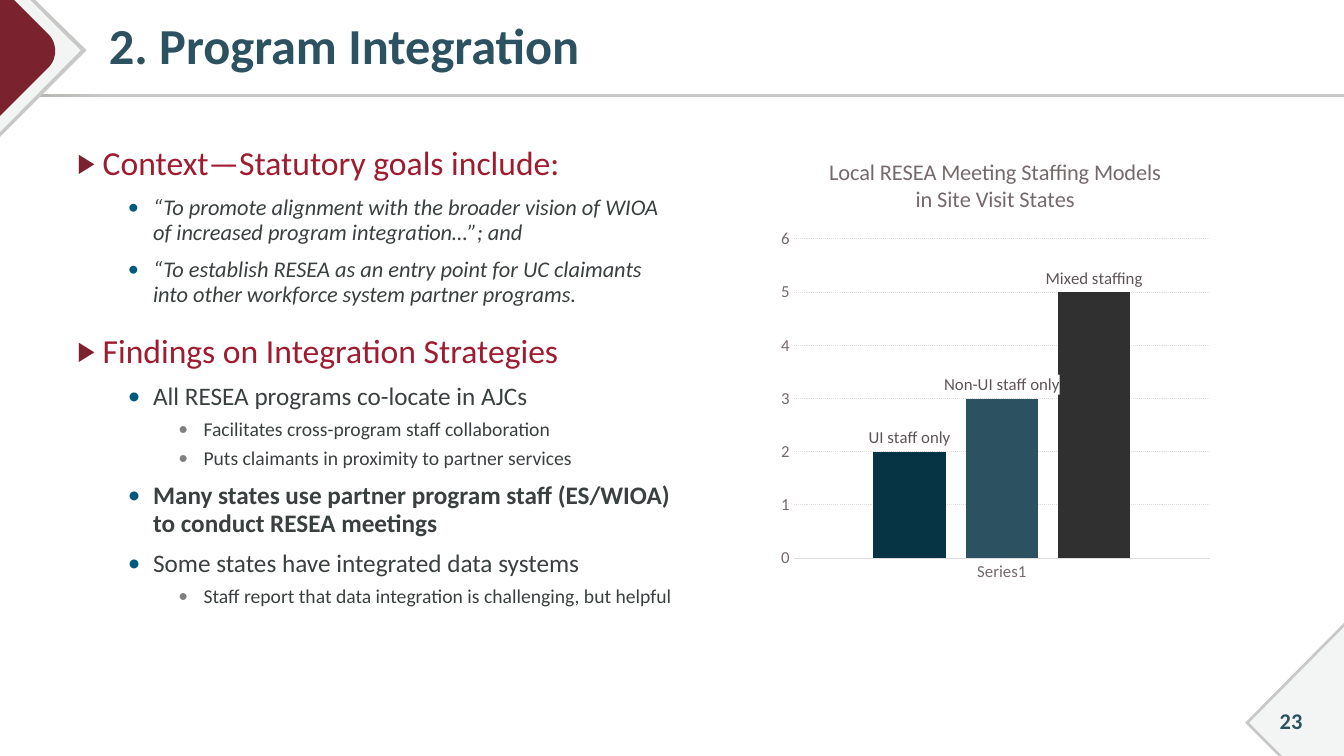
from lxml import etree
from pptx import Presentation
from pptx.chart.data import CategoryChartData
from pptx.dml.color import RGBColor
from pptx.enum.chart import XL_CHART_TYPE, XL_LABEL_POSITION, XL_TICK_MARK
from pptx.enum.dml import MSO_LINE
from pptx.enum.shapes import MSO_SHAPE
from pptx.enum.text import MSO_ANCHOR, PP_ALIGN
from pptx.oxml import parse_xml
from pptx.oxml.ns import nsdecls, qn
from pptx.util import Inches, Pt

FONT = "Calibri"
HEX = {
    "slate": "2C5261", "red": "9E1C30", "wine": "7A232F", "ink": "3A4040",
    "blue": "005A7C", "gray": "808080", "edge": "C8C8C6", "dusk": "ABABA8",
    "pale": "F3F4F4", "navy": "073445", "coal": "303030", "mauve": "76696C",
    "label": "5E5457", "grid": "E0DCDD", "dark": "242021",
}
# Per level: indent, space before, size, text colour, bullet, its colour and percent
LEVELS = [
    (0.25, 18, 24, "red", "▶", "wine", 80),
    (0.75, 8, 18, "ink", "•", "blue", 100),
    (1.25, 5, 14, "ink", "•", "gray", 100),
]
QUOTE = {"size": 16, "italic": True}
POINTS = [
    (0, "Context—Statutory goals include:", {}),
    (1, "“To promote alignment with the broader vision of WIOA of increased "
        "program integration…”; and", QUOTE),
    (1, "“To establish RESEA as an entry point for UC claimants into other "
        "workforce system partner programs.", QUOTE),
    (0, "Findings on Integration Strategies", {}),
    (1, "All RESEA programs co-locate in AJCs", {}),
    (2, "Facilitates cross-program staff collaboration", {}),
    (2, "Puts claimants in proximity to partner services", {}),
    (1, "Many states use partner program staff (ES/WIOA) to conduct RESEA "
        "meetings", {"bold": True}),
    (1, "Some states have integrated data systems", {}),
    (2, "Staff report that data integration is challenging, but helpful", {}),
]
BARS = [
    ("UI staff only", 2, "navy"),
    ("Non-UI staff only", 3, "slate"),
    ("Mixed staffing", 5, "coal"),
]


def color(name):
    return RGBColor.from_string(HEX[name])


def style(font, size, tint, bold=False, italic=False):
    font.name, font.size = FONT, Pt(size)
    font.bold, font.italic = bold, italic
    font.color.rgb = color(tint)


def write(para, text, size, tint, bold=False, italic=False, align=None, line=None):
    """Fill a paragraph with one formatted run."""
    para.alignment = align
    if line:
        para.line_spacing = line
    run = para.add_run()
    run.text = text
    style(run.font, size, tint, bold, italic)


def frame(slide, box, anchor=MSO_ANCHOR.TOP, left=0.1):
    """Add a wrapping text box and return its text frame."""
    text = slide.shapes.add_textbox(*map(Inches, box)).text_frame
    text.word_wrap = True
    text.vertical_anchor = anchor
    text.margin_left = Inches(left)
    return text


def bullet(para, char, tint, percent, indent):
    props = para._p.get_or_add_pPr()
    props.set("marL", str(Inches(indent)))
    props.set("indent", str(Inches(-0.25)))
    shade = etree.SubElement(props, qn("a:buClr"))
    etree.SubElement(shade, qn("a:srgbClr"), val=HEX[tint])
    etree.SubElement(props, qn("a:buSzPct"), val=str(percent * 1000))
    etree.SubElement(props, qn("a:buFont"), typeface=FONT)
    etree.SubElement(props, qn("a:buChar"), char=char)


def outline(slide, points, tint):
    """Draw a closed, filled polygon from points in inches."""
    start, *rest = [(Inches(x), Inches(y)) for x, y in points]
    build = slide.shapes.build_freeform(*start, scale=1.0)
    build.add_line_segments(rest, close=True)
    shape = build.convert_to_shape()
    shape.shadow.inherit = False
    shape.fill.solid()
    shape.fill.fore_color.rgb = color(tint)
    shape.line.fill.background()


def curve(ends, steps=12):
    """Sample a cubic curve given by its four control points."""
    marks = [i / steps for i in range(steps + 1)]
    return [
        tuple((1 - t) ** 3 * a + 3 * t * (1 - t) ** 2 * b
              + 3 * t * t * (1 - t) * c + t ** 3 * d for a, b, c, d in zip(*ends))
        for t in marks
    ]


def rule(slide):
    bar = slide.shapes.add_shape(
        MSO_SHAPE.RECTANGLE, 0, Inches(0.93), Inches(13.33), Inches(0.03))
    bar.shadow.inherit = False
    bar.line.fill.background()
    bar.fill.gradient()
    bar.fill.gradient_angle = 0
    for stop, place, tint in zip(bar.fill.gradient_stops, (0, 0.08), ("dusk", "edge")):
        stop.position = place
        stop.color.rgb = color(tint)


def corners(slide):
    outline(slide, [(0, 0), (0.35, 0), (0.86, 0.5), (0, 1.36)], "edge")
    outline(slide, [(0, 0), (0.3, 0), (0.8, 0.5), (0, 1.31)], "pale")
    nose = curve([(0.48, 0.34), (0.57, 0.43), (0.57, 0.58), (0.48, 0.67)])
    outline(slide, [(0, 0), (0.14, 0), *nose, (0, 1.15)], "wine")
    for gap, tint in ((0, "edge"), (0.04, "pale")):
        outline(slide, [(13.33, 6.18 + gap), (13.33, 7.5), (12.68 + gap, 7.5),
                        (12.35 + gap, 7.17)], tint)


def body(slide):
    text = frame(slide, (0.67, 1.39, 6.15, 5.09))
    for i, (level, words, extra) in enumerate(POINTS):
        indent, before, size, tint, *mark = LEVELS[level]
        para = text.add_paragraph() if i else text.paragraphs[0]
        para.level = level
        bullet(para, *mark, indent)
        para.space_before = Pt(before if i else 0)
        write(para, words, **{"size": size, "tint": tint, "line": 0.95, **extra})


def axes(chart):
    value, group = chart.value_axis, chart.category_axis
    for axis in (value, group):
        axis.major_tick_mark = axis.minor_tick_mark = XL_TICK_MARK.NONE
        style(axis.tick_labels.font, 12, "mauve")
    value.minimum_scale, value.maximum_scale, value.major_unit = 0, 6, 1
    value.format.line.fill.background()
    for line in (value.major_gridlines.format.line, group.format.line):
        line.color.rgb = color("grid")
        line.width = Pt(0.75)
    value.major_gridlines.format.line.dash_style = MSO_LINE.ROUND_DOT


def layout(chart, x, y, w, h):
    """Fix the inner plot area, as fractions of the chart."""
    area = chart._chartSpace.chart.plotArea
    for old in area.findall(qn("c:layout")):
        area.remove(old)
    spots = "".join(f'<c:{k} val="{v}"/>' for k, v in (
        ("layoutTarget", "inner"), ("xMode", "edge"), ("yMode", "edge"),
        ("x", x), ("y", y), ("w", w), ("h", h)))
    area.insert(0, parse_xml(
        f'<c:layout {nsdecls("c")}><c:manualLayout>{spots}</c:manualLayout></c:layout>'))


def graph(slide):
    data = CategoryChartData()
    data.categories = ["Series1"]
    for name, count, _ in BARS:
        data.add_series(name, [count])
    box = map(Inches, (7.65, 1.39, 4.44, 4.46))
    chart = slide.shapes.add_chart(XL_CHART_TYPE.COLUMN_CLUSTERED, *box, data).chart
    style(chart.font, 10, "dark")
    chart.has_legend = False
    title = chart.chart_title.text_frame
    write(title.paragraphs[0], "Local RESEA Meeting Staffing Models", 16, "mauve")
    write(title.add_paragraph(), "in Site Visit States", 16, "mauve")
    axes(chart)
    layout(chart, 0.05, 0.22, 0.93, 0.71)
    plot = chart.plots[0]
    plot.vary_by_categories = False
    plot.gap_width, plot.overlap = 219, -27
    for series, (name, _, tint) in zip(plot.series, BARS):
        series.format.fill.solid()
        series.format.fill.fore_color.rgb = color(tint)
        tag = series.points[0].data_label
        write(tag.text_frame.paragraphs[0], name, 12, "label")
        tag.position = XL_LABEL_POSITION.OUTSIDE_END
    for words in chart._chartSpace.xpath(".//c:dLbl/c:tx"):
        words.addnext(parse_xml(
            f'<c:spPr {nsdecls("c", "a")}><a:solidFill><a:srgbClr val="FFFFFF"/>'
            '</a:solidFill></c:spPr>'))


def main():
    deck = Presentation()
    deck.slide_width, deck.slide_height = Inches(13.33), Inches(7.5)
    slide = deck.slides.add_slide(deck.slide_layouts[6])
    rule(slide)
    corners(slide)
    number = frame(slide, (12.45, 6.95, 0.71, 0.4), MSO_ANCHOR.MIDDLE)
    write(number.paragraphs[0], "23", 16, "slate", bold=True, align=PP_ALIGN.CENTER)
    title = frame(slide, (0.88, 0.05, 12.12, 0.86), MSO_ANCHOR.MIDDLE, left=0.2)
    write(title.paragraphs[0], "2. Program Integration", 36, "slate", bold=True, line=0.9)
    body(slide)
    graph(slide)
    deck.save("out.pptx")


if __name__ == "__main__":
    main()
